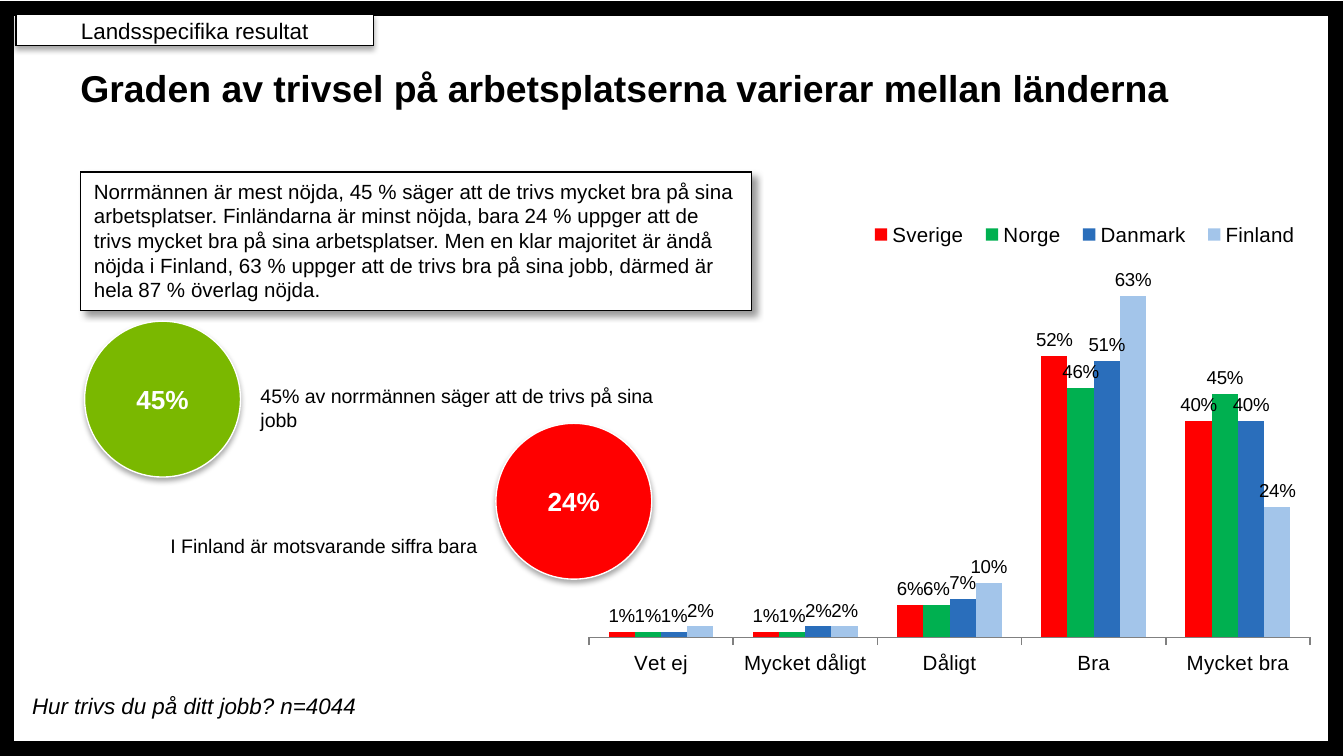
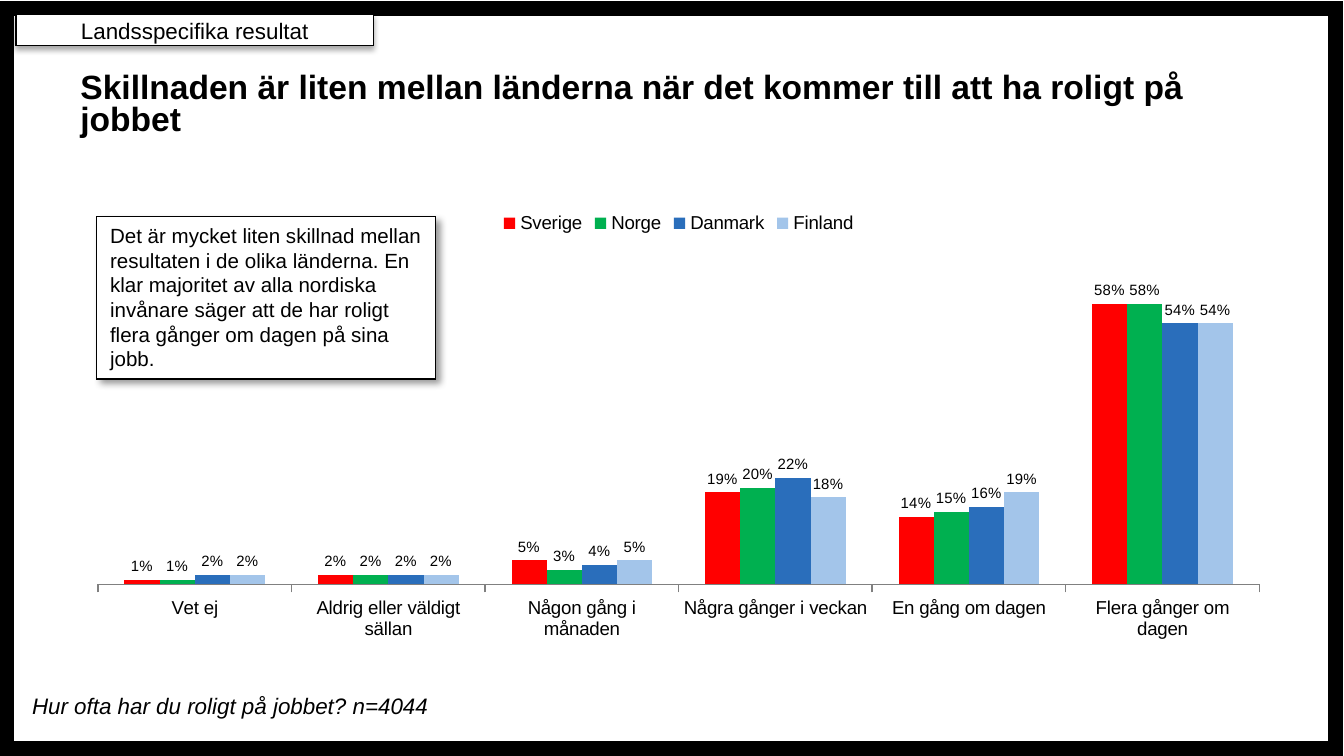
from dataclasses import dataclass

from lxml import etree
from pptx import Presentation
from pptx.chart.data import CategoryChartData
from pptx.dml.color import RGBColor
from pptx.enum.chart import XL_CHART_TYPE, XL_LABEL_POSITION, XL_LEGEND_POSITION, XL_TICK_MARK
from pptx.enum.shapes import MSO_SHAPE
from pptx.enum.text import MSO_ANCHOR, PP_ALIGN
from pptx.oxml.ns import qn
from pptx.util import Emu, Pt

COLUMNS = XL_CHART_TYPE.COLUMN_CLUSTERED
OUTSIDE_END = XL_LABEL_POSITION.OUTSIDE_END
LEGEND_TOP = XL_LEGEND_POSITION.TOP
TICK_OUT, TICK_NONE = XL_TICK_MARK.OUTSIDE, XL_TICK_MARK.NONE
RECTANGLE, OVAL = MSO_SHAPE.RECTANGLE, MSO_SHAPE.OVAL
TOP, MIDDLE = MSO_ANCHOR.TOP, MSO_ANCHOR.MIDDLE
LEFT, CENTER = PP_ALIGN.LEFT, PP_ALIGN.CENTER

EMU_PER_PX = 9144
SLIDE_WIDTH = 1000
BLANK_LAYOUT = 6
PERCENT = "###0%"


@dataclass(frozen=True)
class Theme:
    font: str = "Arial"
    black: str = "000000"
    white: str = "FFFFFF"
    axis: str = "808080"
    green: str = "7AB800"
    red: str = "FF0000"
    countries: tuple[str, ...] = ("FF0000", "00B050", "2A6EBB", "A3C5EA")
    frame_line: float = 8
    thin_line: float = 0.75
    tag_size: float = 12
    question_size: float = 12
    summary_size: float = 11
    caption_size: float = 10.5
    bubble_size: float = 14


THEME = Theme()


@dataclass(frozen=True)
class Box:
    left: int
    top: int
    width: int
    height: int

    def emu(self) -> tuple[Emu, ...]:
        return tuple(Emu(px * EMU_PER_PX)
                     for px in (self.left, self.top, self.width, self.height))


@dataclass(frozen=True)
class TextStyle:
    size: float
    color: str = THEME.black
    bold: bool = False
    italic: bool = False
    align: PP_ALIGN = LEFT
    anchor: MSO_ANCHOR = TOP
    line_spacing: float | None = None


@dataclass(frozen=True)
class Shadow:
    opacity: int
    blur: float
    distance: float
    degrees: int


@dataclass(frozen=True)
class Bubble:
    box: Box
    text: str
    fill: str


@dataclass(frozen=True)
class Caption:
    box: Box
    text: str


@dataclass(frozen=True)
class Area:
    x: float
    y: float
    w: float
    h: float


@dataclass(frozen=True)
class CountryChart:
    box: Box
    size: float
    label_size: float
    plot_area: Area
    legend_area: Area
    categories: tuple[str, ...]
    percents: dict[str, tuple[int, ...]]


@dataclass(frozen=True)
class ResultSlide:
    title: str
    title_size: float
    question: str
    summary: Caption
    chart: CountryChart
    bubbles: tuple[Bubble, ...] = ()
    captions: tuple[Caption, ...] = ()


FRAME = Box(5, 6, 989, 551)
TAG = Box(12, 11, 266, 23)
TITLE = Box(50, 50, 900, 66)
QUESTION = Box(14, 510, 976, 30)
SOFT_SHADOW = Shadow(35, 3.1, 1.8, 90)
SUMMARY_SHADOW = Shadow(40, 4, 3, 45)

SLIDES = (
    ResultSlide(
        title="Graden av trivsel på arbetsplatserna varierar mellan länderna",
        title_size=20,
        question="Hur trivs du på ditt jobb? n=4044",
        summary=Caption(
            Box(60, 128, 499, 103),
            "Norrmännen är mest nöjda, 45 % säger att de trivs mycket bra på sina "
            "arbetsplatser. Finländarna är minst nöjda, bara 24 % uppger att de trivs "
            "mycket bra på sina arbetsplatser. Men en klar majoritet är ändå nöjda i "
            "Finland, 63 % uppger att de trivs bra på sina jobb, därmed är hela 87 % "
            "överlag nöjda."),
        chart=CountryChart(
            Box(427, 153, 559, 357), 11, 10,
            Area(0.02, 0.11, 0.96, 0.79), Area(0.38, 0.03, 0.6, 0.06),
            ("Vet ej", "Mycket dåligt", "Dåligt", "Bra", "Mycket bra"),
            {"Sverige": (1, 1, 6, 52, 40),
             "Norge": (1, 1, 6, 46, 45),
             "Danmark": (1, 2, 7, 51, 40),
             "Finland": (2, 2, 10, 63, 24)}),
        bubbles=(Bubble(Box(63, 239, 116, 116), "45%", THEME.green),
                 Bubble(Box(369, 315, 116, 116), "24%", THEME.red)),
        captions=(Caption(Box(184, 281, 326, 45),
                          "45% av norrmännen säger att de trivs på sina jobb"),
                  Caption(Box(117, 392, 326, 28),
                          "I Finland är motsvarande siffra bara"))),
    ResultSlide(
        title="Skillnaden är liten mellan länderna när det kommer till att ha roligt på jobbet",
        title_size=18,
        question="Hur ofta har du roligt på jobbet? n=4044",
        summary=Caption(
            Box(72, 161, 252, 121),
            "Det är mycket liten skillnad mellan resultaten i de olika länderna. En klar "
            "majoritet av alla nordiska invånare säger att de har roligt flera gånger om "
            "dagen på sina jobb."),
        chart=CountryChart(
            Box(55, 146, 900, 336), 10, 8,
            Area(0.02, 0.11, 0.96, 0.75), Area(0.35, 0.03, 0.3, 0.06),
            ("Vet ej", "Aldrig eller väldigt sällan", "Någon gång i månaden",
             "Några gånger i veckan", "En gång om dagen", "Flera gånger om dagen"),
            {"Sverige": (1, 2, 5, 19, 14, 58),
             "Norge": (1, 2, 3, 20, 15, 58),
             "Danmark": (2, 2, 4, 22, 16, 54),
             "Finland": (2, 2, 5, 18, 19, 54)})),
)


def rgb(color: str) -> RGBColor:
    return RGBColor.from_string(color)


def write(shape, text: str, style: TextStyle) -> None:
    frame = shape.text_frame
    frame.word_wrap = True
    frame.vertical_anchor = style.anchor
    paragraph = frame.paragraphs[0]
    paragraph.alignment = style.align
    if style.line_spacing:
        paragraph.line_spacing = style.line_spacing
    run = paragraph.add_run()
    run.text = text
    run.font.name = THEME.font
    run.font.size = Pt(style.size)
    run.font.bold = style.bold
    run.font.italic = style.italic
    run.font.color.rgb = rgb(style.color)


def add_text(slide, box: Box, text: str, style: TextStyle) -> None:
    write(slide.shapes.add_textbox(*box.emu()), text, style)


def add_shadow(shape, shadow: Shadow) -> None:
    effects = shape._element.spPr.find(qn("a:effectLst"))
    outer = etree.SubElement(effects, qn("a:outerShdw"), {
        "blurRad": str(Pt(shadow.blur)), "dist": str(Pt(shadow.distance)),
        "dir": str(shadow.degrees * 60000), "algn": "ctr", "rotWithShape": "0"})
    color = etree.SubElement(outer, qn("a:srgbClr"), {"val": THEME.black})
    etree.SubElement(color, qn("a:alpha"), {"val": str(shadow.opacity * 1000)})


def add_panel(slide, kind: MSO_SHAPE, box: Box, fill: str | None, line: str,
              line_width: float, shadow: Shadow | None = None):
    shape = slide.shapes.add_shape(kind, *box.emu())
    shape.shadow.inherit = False
    if fill:
        shape.fill.solid()
        shape.fill.fore_color.rgb = rgb(fill)
    else:
        shape.fill.background()
    shape.line.color.rgb = rgb(line)
    shape.line.width = Pt(line_width)
    outline = shape._element.spPr.find(qn("a:ln"))
    etree.SubElement(outline, qn("a:miter"), {"lim": "800000"})
    if shadow:
        add_shadow(shape, shadow)
    return shape


def set_layout(parent, index: int, area: Area, inner: bool = False) -> None:
    for existing in parent.findall(qn("c:layout")):
        parent.remove(existing)
    layout = etree.Element(qn("c:layout"))
    manual = etree.SubElement(layout, qn("c:manualLayout"))
    settings = [("layoutTarget", "inner")] if inner else []
    settings += [("xMode", "edge"), ("yMode", "edge")]
    settings += [(name, str(getattr(area, name))) for name in "xywh"]
    for name, value in settings:
        etree.SubElement(manual, qn(f"c:{name}"), {"val": value})
    parent.insert(index, layout)


def add_country_chart(slide, content: CountryChart) -> None:
    data = CategoryChartData(number_format=PERCENT)
    data.categories = content.categories
    for country, percents in content.percents.items():
        data.add_series(country, [percent / 100 for percent in percents])
    chart = slide.shapes.add_chart(COLUMNS, *content.box.emu(), data).chart
    chart.has_title = False
    chart.font.name = THEME.font
    chart.font.size = Pt(content.size)
    chart.font.color.rgb = rgb(THEME.black)

    chart.has_legend = True
    chart.legend.position = LEGEND_TOP
    chart.legend.include_in_layout = False
    set_layout(chart.legend._element, 1, content.legend_area)
    set_layout(chart._chartSpace.chart.plotArea, 0, content.plot_area, inner=True)

    chart.value_axis.visible = False
    chart.value_axis.has_major_gridlines = False
    chart.value_axis.minimum_scale = 0
    chart.value_axis.maximum_scale = 0.7
    chart.value_axis.tick_labels.number_format = PERCENT
    chart.value_axis.tick_labels.number_format_is_linked = False
    chart.category_axis.major_tick_mark = TICK_OUT
    chart.category_axis.minor_tick_mark = TICK_NONE
    chart.category_axis.format.line.color.rgb = rgb(THEME.axis)

    plot = chart.plots[0]
    plot.vary_by_categories = False
    plot.gap_width = 150
    plot.overlap = 0
    for series, color in zip(plot.series, THEME.countries):
        series.format.fill.solid()
        series.format.fill.fore_color.rgb = rgb(color)
        labels = series.data_labels
        labels.show_value = True
        labels.position = OUTSIDE_END
        labels.number_format = PERCENT
        labels.number_format_is_linked = False
        labels.font.name = THEME.font
        labels.font.size = Pt(content.label_size)
        labels.font.color.rgb = rgb(THEME.black)


def add_result_slide(presentation, content: ResultSlide) -> None:
    slide = presentation.slides.add_slide(presentation.slide_layouts[BLANK_LAYOUT])
    add_panel(slide, RECTANGLE, FRAME, None, THEME.black, THEME.frame_line)
    add_country_chart(slide, content.chart)
    summary = add_panel(slide, RECTANGLE, content.summary.box, THEME.white, THEME.black,
                        THEME.thin_line, SUMMARY_SHADOW)
    write(summary, content.summary.text, TextStyle(THEME.summary_size))
    add_text(slide, QUESTION, content.question,
             TextStyle(THEME.question_size, italic=True))
    for caption in content.captions:
        add_text(slide, caption.box, caption.text, TextStyle(THEME.caption_size))
    for bubble in content.bubbles:
        circle = add_panel(slide, OVAL, bubble.box, bubble.fill, THEME.white,
                           THEME.thin_line, SOFT_SHADOW)
        write(circle, bubble.text, TextStyle(THEME.bubble_size, THEME.white, bold=True,
                                             align=CENTER, anchor=MIDDLE))
    add_text(slide, TITLE, content.title,
             TextStyle(content.title_size, bold=True, line_spacing=0.8))
    tag = add_panel(slide, RECTANGLE, TAG, THEME.white, THEME.black,
                    THEME.thin_line, SOFT_SHADOW)
    write(tag, "Landsspecifika resultat",
          TextStyle(THEME.tag_size, align=CENTER, anchor=MIDDLE))


def main() -> None:
    presentation = Presentation()
    presentation.slide_width = Emu(SLIDE_WIDTH * EMU_PER_PX)
    presentation.slide_height = Emu(SLIDE_WIDTH * EMU_PER_PX * 9 // 16)
    for content in SLIDES:
        add_result_slide(presentation, content)
    presentation.save("out.pptx")


if __name__ == "__main__":
    main()
